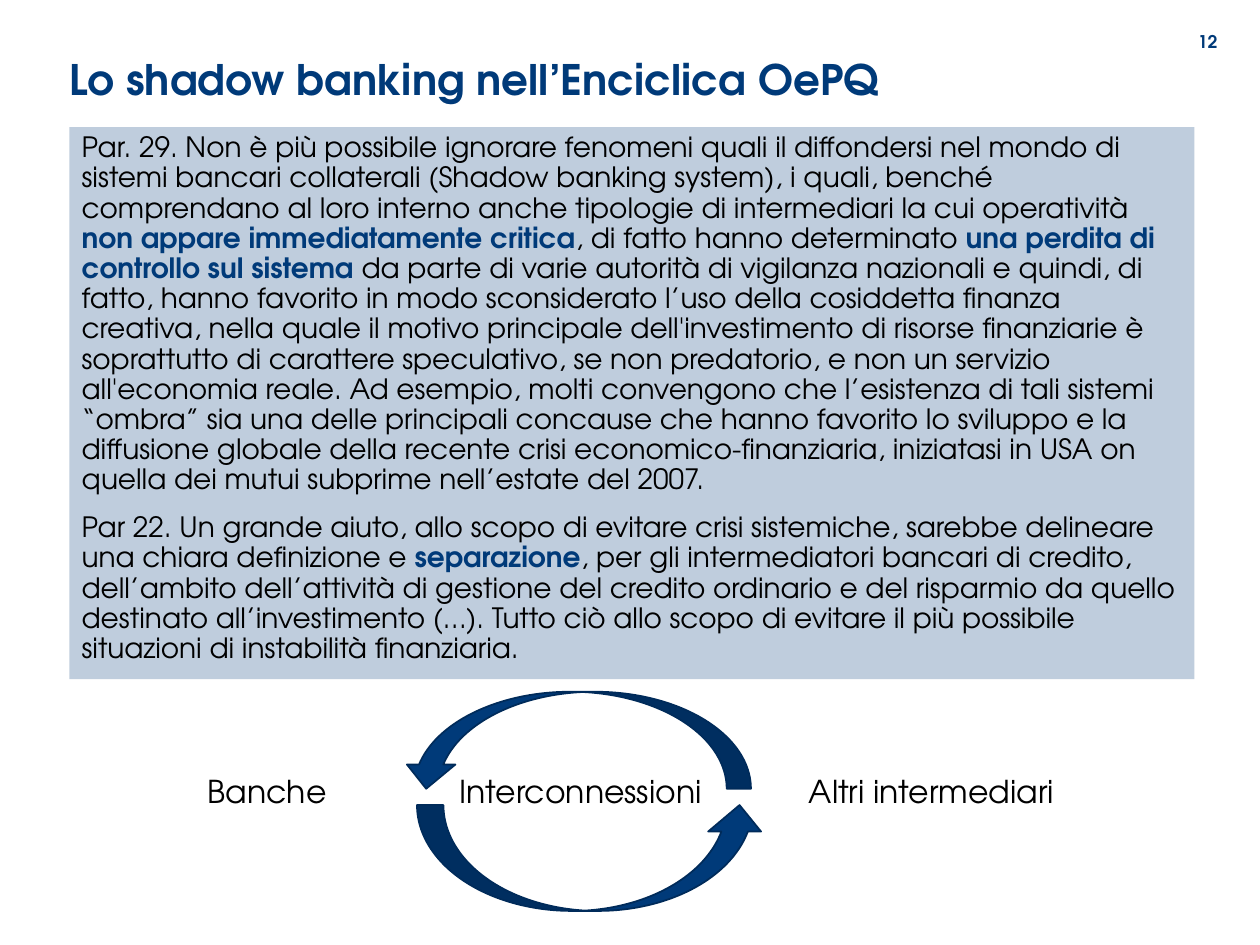
from pptx import Presentation
from pptx.util import Inches, Pt
from pptx.dml.color import RGBColor
from pptx.enum import shapes, text
from lxml import etree

BLUE = RGBColor(0x00, 0x3A, 0x79)
NAVY = RGBColor(0x00, 0x2B, 0x5A)
BLACK = RGBColor(0, 0, 0)
FONT = "TeX Gyre Adventor"


def add_run(para, words, size, color=BLACK, bold=False):
    run = para.add_run()
    run.text = words
    font = run.font
    font.name, font.size, font.bold = FONT, Pt(size), bold
    font.color.rgb = color


prs = Presentation()
prs.slide_width, prs.slide_height = Inches(10), Inches(7.5)
slide = prs.slides.add_slide(prs.slide_layouts[5])

title = slide.shapes.title
title.left, title.top = Inches(0.45), Inches(0.4)
title.width, title.height = Inches(8.57), Inches(0.5)
frame = title.text_frame
frame.word_wrap = True
frame.auto_size = text.MSO_AUTO_SIZE.NONE
frame.vertical_anchor = text.MSO_ANCHOR.MIDDLE
para = frame.paragraphs[0]
para.alignment = text.PP_ALIGN.LEFT
para.line_spacing = 0.9
add_run(para, "Lo shadow banking nell’Enciclica OePQ", 24, BLUE, True)

quotes = [
    [
        ("Par. 29. Non è più possibile ignorare fenomeni quali il diffondersi nel mondo di "
         "sistemi bancari collaterali (Shadow banking system), i quali, benché comprendano "
         "al loro interno anche tipologie di intermediari la cui operatività ", False),
        ("non appare immediatamente critica", True),
        (", di fatto hanno determinato ", False),
        ("una perdita di controllo sul sistema ", True),
        ("da parte di varie autorità di vigilanza nazionali e quindi, di fatto, hanno "
         "favorito in modo sconsiderato l’uso della cosiddetta finanza creativa, nella "
         "quale il motivo principale dell'investimento di risorse finanziarie è soprattutto "
         "di carattere speculativo, se non predatorio, e non un servizio all'economia reale. "
         "Ad esempio, molti convengono che l’esistenza di tali sistemi “ombra” sia una delle "
         "principali concause che hanno favorito lo sviluppo e la diffusione globale della "
         "recente crisi economico-finanziaria, iniziatasi in USA on quella dei mutui "
         "subprime nell’estate del 2007.", False),
    ],
    [
        ("Par 22. Un grande aiuto, allo scopo di evitare crisi sistemiche, sarebbe "
         "delineare una chiara definizione e ", False),
        ("separazione", True),
        (", per gli intermediatori bancari di credito, dell’ambito dell’attività di "
         "gestione del credito ordinario e del risparmio da quello destinato "
         "all’investimento (…). Tutto ciò allo scopo di evitare il più possibile "
         "situazioni di instabilità finanziaria.", False),
    ],
]
panel = slide.shapes.add_shape(
    shapes.MSO_SHAPE.RECTANGLE, Inches(0.55), Inches(1.01), Inches(8.93), Inches(4.38))
panel.shadow.inherit = False
panel.line.fill.background()
panel.fill.solid()
panel.fill.fore_color.rgb = BLUE
tint = panel.element.spPr.find(".//{*}srgbClr")
etree.SubElement(tint, tint.tag.replace("srgbClr", "alpha"), val="25000")
frame = panel.text_frame
frame.word_wrap = True
frame.vertical_anchor = text.MSO_ANCHOR.TOP
for i, quote in enumerate(quotes):
    para = frame.add_paragraph() if i else frame.paragraphs[0]
    para.alignment = text.PP_ALIGN.LEFT
    para.line_spacing = 0.9
    para.space_before = Pt(10 if i else 0)
    for words, strong in quote:
        add_run(para, words, 16, BLUE if strong else BLACK, strong)

arrows = [
    (shapes.MSO_SHAPE.CURVED_UP_ARROW, 3.19, 5.49, 0.77, "rot", "10800000"),
    (shapes.MSO_SHAPE.CURVED_DOWN_ARROW, 3.31, 6.39, 0.84, "flipV", "1"),
]
for kind, left, top, height, turn, value in arrows:
    arrow = slide.shapes.add_shape(
        kind, Inches(left), Inches(top), Inches(2.77), Inches(height))
    arrow.shadow.inherit = False
    arrow.fill.solid()
    arrow.fill.fore_color.rgb = BLUE
    arrow.line.color.rgb = NAVY
    arrow.line.width = Pt(1)
    arrow.element.spPr.xfrm.set(turn, value)

LEFT, CENTER = text.PP_ALIGN.LEFT, text.PP_ALIGN.CENTER
labels = [
    ("Altri intermediari", 6.32, 6.08, 2.32, 18, BLACK, LEFT, True),
    ("Interconnessioni", 3.55, 6.08, 2.22, 18, BLACK, LEFT, False),
    ("Banche", 1.55, 6.08, 1.22, 18, BLACK, LEFT, True),
    ("12", 9.36, 0.2, 0.45, 10, BLUE, CENTER, True),
]
for words, left, top, width, size, color, align, wrap in labels:
    box = slide.shapes.add_textbox(Inches(left), Inches(top), Inches(width), Inches(0.4))
    box.text_frame.word_wrap = wrap
    para = box.text_frame.paragraphs[0]
    para.alignment = align
    add_run(para, words, size, color, color == BLUE)

prs.save("out.pptx")
